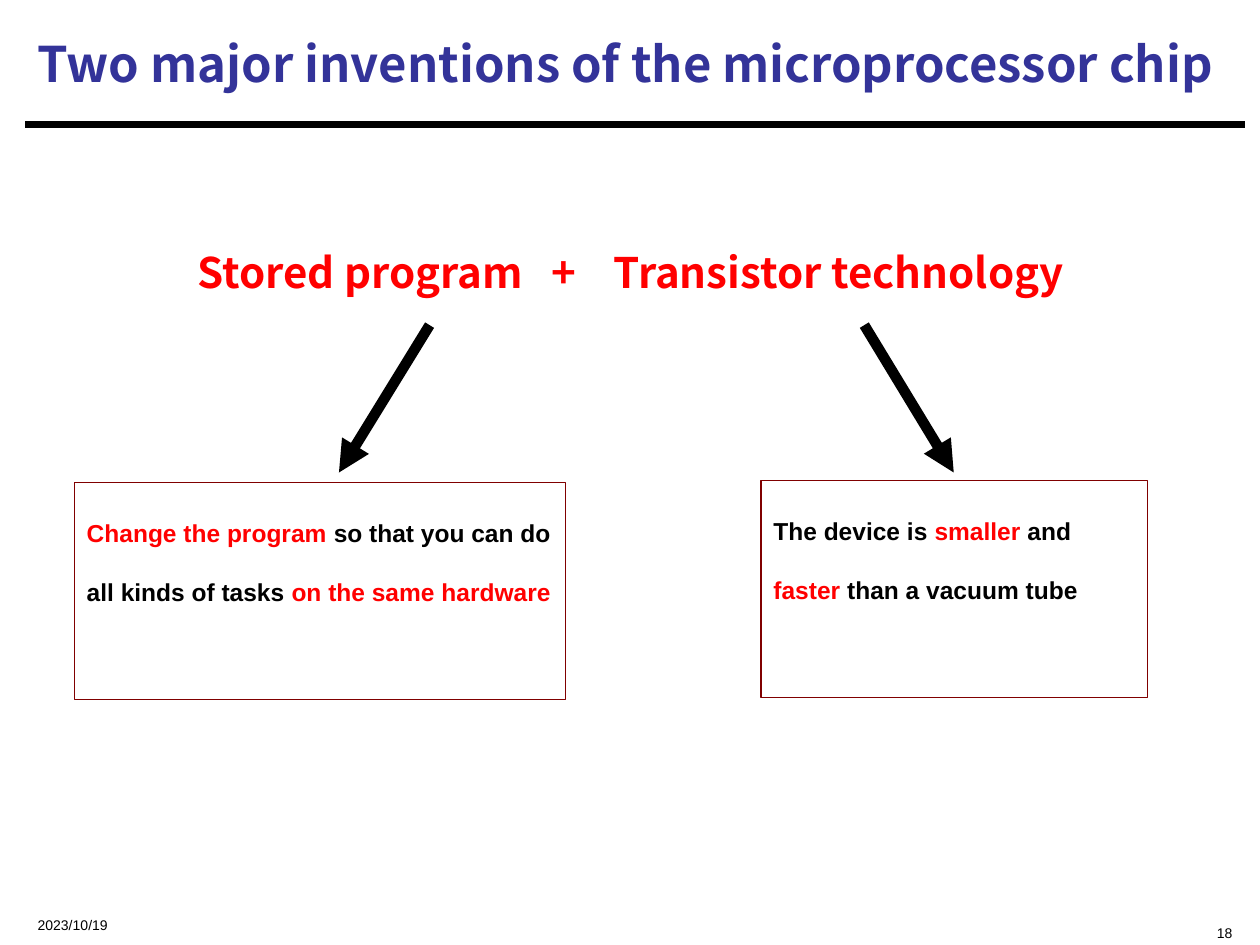
import pptx
import pptx.util
import pptx.dml.color
import pptx.enum.shapes
import pptx.enum.text
import pptx.oxml
import pptx.oxml.ns
from dataclasses import dataclass

Pt = pptx.util.Pt
Align = pptx.enum.text.PP_ALIGN
Anchor = pptx.enum.text.MSO_ANCHOR


@dataclass(frozen=True)
class Theme:
    ink: str = "000000"
    key: str = "FF0000"
    head: str = "333399"
    edge: str = "800000"
    sans: str = "Arial"
    cjk: str = "Noto Sans CJK SC"
    title: int = 28
    lead: int = 24
    note: int = 14
    foot: int = 8


THEME = Theme()


def color(code):
    return pptx.dml.color.RGBColor.from_string(code)


def place(shape, left, top, width, height):
    shape.left, shape.top = Pt(left), Pt(top)
    shape.width, shape.height = Pt(width), Pt(height)


def write(shape, runs, size, font=THEME.sans, bold=True, align=Align.LEFT,
          anchor=Anchor.TOP, pad=3.6, base=3.6, space=1.0):
    frame = shape.text_frame
    frame.word_wrap = True
    frame.auto_size = pptx.enum.text.MSO_AUTO_SIZE.NONE
    frame.vertical_anchor = anchor
    frame.margin_left = frame.margin_right = Pt(7.2)
    frame.margin_top, frame.margin_bottom = Pt(pad), Pt(base)
    para = frame.paragraphs[0]
    para.alignment = align
    para.line_spacing = space
    para.space_before = Pt(0)
    for text, code, *gap in runs:
        run = para.add_run()
        run.text = text
        run.font.name, run.font.size, run.font.bold = font, Pt(size), bold
        run.font.color.rgb = color(code)
        if gap:
            run.font._element.set("spc", str(round(gap[0] * 100)))
    return para


def plain(para):
    props = para._p.get_or_add_pPr()
    props.set("marL", "0")
    props.set("indent", "0")
    props.append(pptx.oxml.parse_xml(
        f"<a:buNone {pptx.oxml.ns.nsdecls('a')}/>"))


def stroke(slide, start, end, width, arrow=False):
    line = slide.shapes.add_connector(
        pptx.enum.shapes.MSO_CONNECTOR.STRAIGHT,
        *(Pt(v) for v in (*start, *end)))
    line.line.color.rgb = color(THEME.ink)
    line.line.width = Pt(width)
    names = pptx.oxml.ns.nsdecls("a")
    if arrow:
        line.line._get_or_add_ln().append(
            pptx.oxml.parse_xml(f'<a:tailEnd {names} type="triangle"/>'))
    line._element.spPr.append(pptx.oxml.parse_xml(f"<a:effectLst {names}/>"))


def box(slide, area, runs):
    shape = slide.shapes.add_shape(
        pptx.enum.shapes.MSO_SHAPE.RECTANGLE, *(Pt(v) for v in area))
    shape.shadow.inherit = False
    shape.fill.background()
    shape.line.color.rgb = color(THEME.edge)
    shape.line.width = Pt(0.75)
    write(shape, runs, THEME.note, space=2.0)


def foot(slide, area, text, **form):
    shape = slide.shapes.add_textbox(*(Pt(v) for v in area))
    write(shape, [(text, THEME.ink)], THEME.foot, bold=False, base=0, **form)


def main():
    deck = pptx.Presentation()
    deck.slide_width, deck.slide_height = Pt(720), Pt(540)
    slide = deck.slides.add_slide(deck.slide_layouts[1])
    title, body = slide.placeholders
    ink, key = THEME.ink, THEME.key

    stroke(slide, (14.4, 71.3), (711.4, 71.3), 3.75)
    place(title, 14.4, 5.8, 696.2, 60.5)
    write(title, [("Two major inventions of the microprocessor chip", THEME.head)],
          THEME.title, font=THEME.cjk, anchor=Anchor.MIDDLE)
    place(body, 88.6, 140.4, 543.6, 63.4)
    plain(write(body, [("Stored program", key), (" ", key, 10.8), ("+", key),
                       (" ", key, 16.1), ("Transistor technology", key)],
                THEME.lead, font=THEME.cjk, align=Align.CENTER, space=0.9))

    box(slide, (42.5, 275.8, 280.8, 123.8),
        [("Change the program ", key),
         ("so that you can do all kinds of tasks ", ink),
         ("on the same hardware", key)])
    box(slide, (434.9, 274.7, 221, 123.8),
        [("The device is ", ink), ("smaller", key), (" and ", ink),
         ("faster", key), (" than a vacuum tube", ink)])
    for start, end in ((245.5, 193.7), (493.9, 545)):
        stroke(slide, (start, 185.8), (end, 270), 6, arrow=True)

    foot(slide, (14.4, 514.8, 180, 19.4), "2023/10/19", pad=9)
    foot(slide, (495.4, 514.8, 216, 19.4), "18", pad=13.3, align=Align.RIGHT)
    deck.save("out.pptx")


if __name__ == "__main__":
    main()
